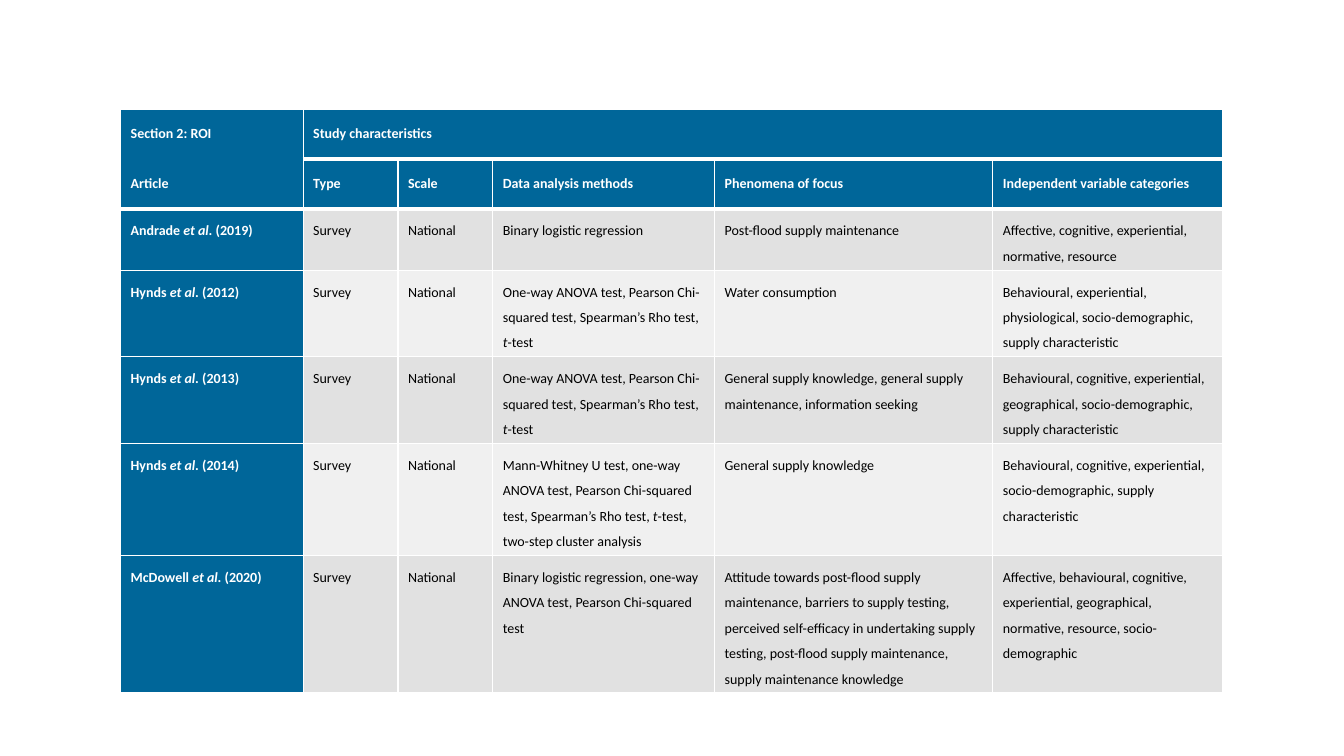
import pptx
import pptx.dml.color
import pptx.enum.text
import pptx.oxml
import pptx.oxml.ns
import pptx.util
from pptx.util import Cm

BLUE = pptx.dml.color.RGBColor(0x00, 0x66, 0x99)
WHITE = pptx.dml.color.RGBColor(0xFF, 0xFF, 0xFF)
BLACK = pptx.dml.color.RGBColor(0x00, 0x00, 0x00)
DARK_BAND = pptx.dml.color.RGBColor(0xE1, 0xE1, 0xE1)
LIGHT_BAND = pptx.dml.color.RGBColor(0xF0, 0xF0, 0xF0)

COLUMN_WIDTHS = [4.6, 2.39, 2.39, 5.59, 7.01, 5.79]
HEADER_HEIGHT = 1.26
LINE_HEIGHT, ROW_PADDING = 0.64, 0.25
THIN, THICK = 1, 3

GROUP_HEADINGS = ["Section 2: ROI", "Study characteristics", "", "", "", ""]
COLUMN_HEADINGS = ["Article", "Type", "Scale", "Data analysis methods",
                   "Phenomena of focus", "Independent variable categories"]
HYNDS_METHODS = "One-way ANOVA test, Pearson Chi-squared test, Spearman’s Rho test, *t*-test"

# Article, lines of text in its row, methods, phenomena, variable categories
STUDIES = [
    ("Andrade *et al.* (2019)", 2,
     "Binary logistic regression",
     "Post-flood supply maintenance",
     "Affective, cognitive, experiential, normative, resource"),
    ("Hynds *et al.* (2012)", 3,
     HYNDS_METHODS,
     "Water consumption",
     "Behavioural, experiential, physiological, socio-demographic, "
     "supply characteristic"),
    ("Hynds *et al.* (2013)", 3,
     HYNDS_METHODS,
     "General supply knowledge, general supply maintenance, information seeking",
     "Behavioural, cognitive, experiential, geographical, socio-demographic, "
     "supply characteristic"),
    ("Hynds *et al.* (2014)", 4,
     "Mann-Whitney U test, one-way ANOVA test, Pearson Chi-squared test, "
     "Spearman’s Rho test, *t*-test, two-step cluster analysis",
     "General supply knowledge",
     "Behavioural, cognitive, experiential, socio-demographic, "
     "supply characteristic"),
    ("McDowell *et al.* (2020)", 5,
     "Binary logistic regression, one-way ANOVA test, Pearson Chi-squared test",
     "Attitude towards post-flood supply maintenance, barriers to supply testing, "
     "perceived self-efficacy in undertaking supply testing, post-flood supply "
     "maintenance, supply maintenance knowledge",
     "Affective, behavioural, cognitive, experiential, geographical, normative, "
     "resource, socio-demographic"),
]


def write_text(cell, text, color=BLACK, bold=False, spacing=None, align=None,
               anchor=pptx.enum.text.MSO_ANCHOR.TOP):
    """Fill the cell with text; parts between asterisks become italic."""
    cell.vertical_anchor = anchor
    paragraph = cell.text_frame.paragraphs[0]
    paragraph.alignment = align
    paragraph.line_spacing = spacing
    for index, part in enumerate(text.split("*")):
        if not part:
            continue
        run = paragraph.add_run()
        run.text = part
        run.font.name = "Calibri"
        run.font.size = pptx.util.Pt(10)
        run.font.bold = bold
        run.font.italic = index % 2 == 1
        run.font.color.rgb = color


def style_cell(cell, fill, top=THIN, bottom=THIN):
    """Set the fill and white borders in points; a width of 0 hides a border."""
    properties = cell._tc.get_or_add_tcPr()
    widths = {"lnL": THIN, "lnR": THIN, "lnT": top, "lnB": bottom}
    for side, width in widths.items():
        paint = (f'<a:solidFill><a:srgbClr val="{WHITE}"/></a:solidFill>'
                 if width else "<a:noFill/>")
        properties.append(pptx.oxml.parse_xml(
            f'<a:{side} {pptx.oxml.ns.nsdecls("a")} w="{pptx.util.Pt(width)}">'
            f"{paint}</a:{side}>"))
    cell.fill.solid()
    cell.fill.fore_color.rgb = fill


def fill_headings(table):
    for row, headings in enumerate([GROUP_HEADINGS, COLUMN_HEADINGS]):
        for column, heading in enumerate(headings):
            cell = table.cell(row, column)
            divider = THICK if column else 0
            style_cell(cell, BLUE,
                       top=divider if row else THIN,
                       bottom=THICK if row else divider)
            write_text(cell, heading, color=WHITE, bold=True,
                       align=None if column else pptx.enum.text.PP_ALIGN.JUSTIFY,
                       anchor=pptx.enum.text.MSO_ANCHOR.MIDDLE)
    table.cell(0, 1).merge(table.cell(0, len(COLUMN_WIDTHS) - 1))


def fill_studies(table, first_row):
    for index, (article, _, *details) in enumerate(STUDIES):
        band = LIGHT_BAND if index % 2 else DARK_BAND
        for column, text in enumerate([article, "Survey", "National", *details]):
            cell = table.cell(first_row + index, column)
            is_article = column == 0
            style_cell(cell, BLUE if is_article else band,
                       top=THIN if index else THICK)
            write_text(cell, text, color=WHITE if is_article else BLACK,
                       bold=is_article, spacing=1.5)


def add_study_table(slide, left, top):
    heights = [HEADER_HEIGHT] * 2 + [
        lines * LINE_HEIGHT + ROW_PADDING for _, lines, *_ in STUDIES]
    table = slide.shapes.add_table(
        len(heights), len(COLUMN_WIDTHS), Cm(left), Cm(top),
        Cm(sum(COLUMN_WIDTHS)), Cm(sum(heights))).table
    for column, width in zip(table.columns, COLUMN_WIDTHS):
        column.width = Cm(width)
    for row, height in zip(table.rows, heights):
        row.height = Cm(height)
    fill_headings(table)
    fill_studies(table, first_row=2)


def main():
    presentation = pptx.Presentation()
    presentation.slide_width = Cm(33.87)
    presentation.slide_height = Cm(19.05)
    slide = presentation.slides.add_slide(presentation.slide_layouts[6])
    add_study_table(slide, left=3.04, top=2.75)
    presentation.save("out.pptx")


if __name__ == "__main__":
    main()
